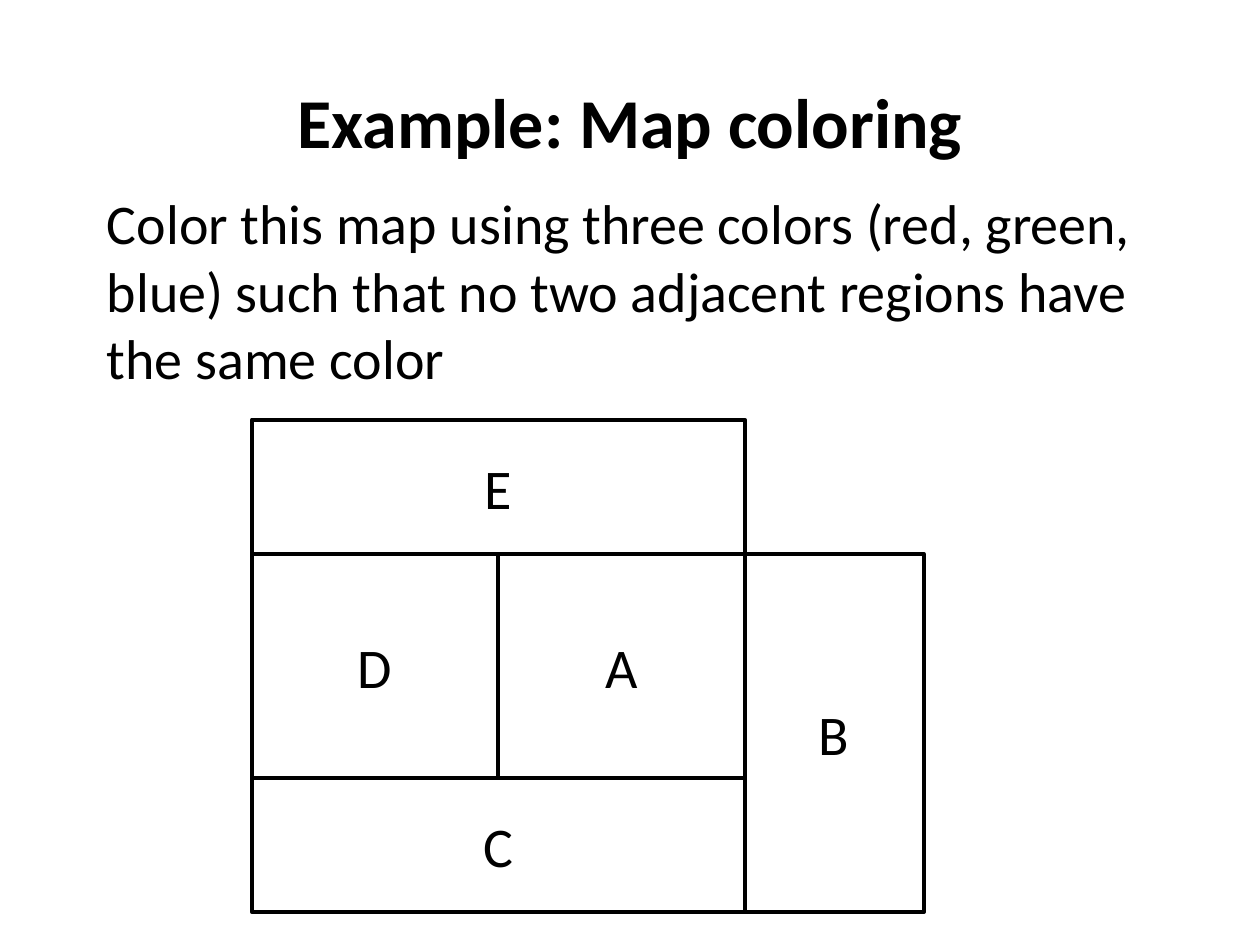
"""Build the map coloring example slide."""
import pptx
import pptx.util
from pptx.dml.color import RGBColor
from pptx.enum.shapes import MSO_SHAPE
from pptx.enum.text import MSO_ANCHOR, PP_ALIGN
from pptx.util import Inches

TITLE = "Example: Map coloring"
TASK = ("Color this map using three colors (red, green, blue) such that "
        "no two adjacent regions have the same color")
MAP_LEFT, MAP_TOP, SIDE = 2, 3.33, 3.91
UNIT = SIDE / 11
REGIONS = [
    ("E", 0, 0, 11, 3),
    ("D", 0, 3, 5.5, 5),
    ("A", 5.5, 3, 5.5, 5),
    ("C", 0, 8, 11, 3),
    ("B", 11, 3, 4, 8),
]


def color(value):
    return RGBColor.from_string(value)


def write(sp, text, size=32, bold=False, align=PP_ALIGN.CENTER,
          anchor=MSO_ANCHOR.MIDDLE, wrap=True):
    tf = sp.text_frame
    tf.word_wrap = wrap
    tf.vertical_anchor = anchor
    p = tf.paragraphs[0]
    p.alignment = align
    r = p.add_run()
    r.text = text
    r.font.name = "Calibri"
    r.font.size = pptx.util.Pt(size)
    r.font.bold = bold
    r.font.color.rgb = color("000000")


def add_region(s, label, col, row, cols, rows):
    sp = s.shapes.add_shape(MSO_SHAPE.RECTANGLE,
                            Inches(MAP_LEFT + col * UNIT), Inches(MAP_TOP + row * UNIT),
                            Inches(cols * UNIT), Inches(rows * UNIT))
    sp.shadow.inherit = False
    sp.fill.background()
    sp.line.color.rgb = color("000000")
    sp.line.width = pptx.util.Pt(2.25)
    write(sp, label, wrap=False)


def main():
    prs = pptx.Presentation()
    prs.slide_width, prs.slide_height = Inches(10), Inches(7.5)
    s = prs.slides.add_slide(prs.slide_layouts[6])
    title = s.shapes.add_textbox(Inches(0.75), Inches(0.33), Inches(8.5), Inches(1.25))
    write(title, TITLE, size=40, bold=True)
    task = s.shapes.add_textbox(Inches(0.75), Inches(1.45), Inches(8.5), Inches(1.83))
    write(task, TASK, align=PP_ALIGN.LEFT, anchor=MSO_ANCHOR.TOP)
    for region in REGIONS:
        add_region(s, *region)
    prs.save("out.pptx")


if __name__ == "__main__":
    main()
